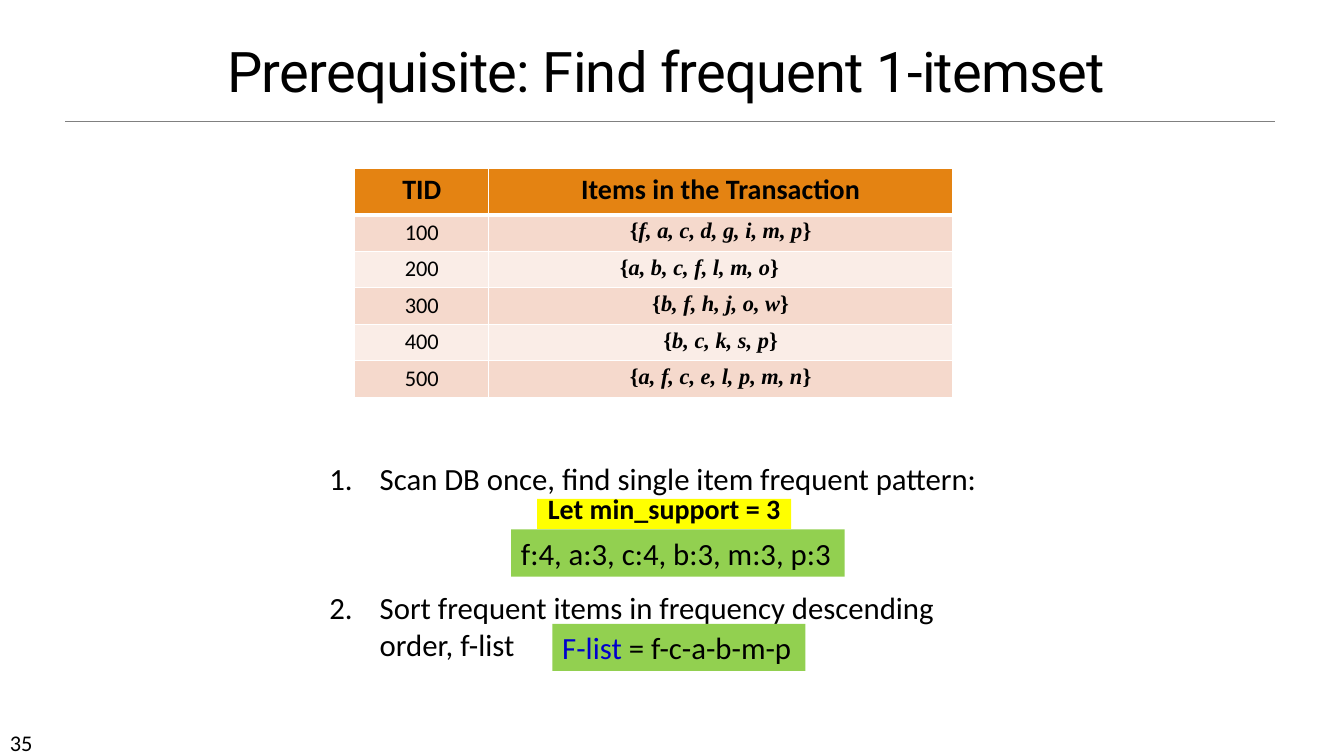
import pptx
import pptx.dml.color
import pptx.enum.shapes
import pptx.enum.text
import pptx.oxml
import pptx.oxml.ns
import pptx.util
from pptx.util import Cm

ALIGN = pptx.enum.text.PP_ALIGN
ANCHOR = pptx.enum.text.MSO_ANCHOR
BODY = {"name": "Calibri", "size": 22, "color": "000000"}
HEADER = {**BODY, "size": 20, "bold": True}
TID = {**BODY, "size": 16, "bold": False}
BRACE = {**TID, "name": "Times New Roman", "bold": True}
ITEMS = {**BRACE, "italic": True}
GREEN, YELLOW = "92D050", "FFFF00"
HEADER_FILL, ROW_FILLS = "E48312", ("F5D9CC", "FAEDE7")

TRANSACTIONS = [
    ("100", "f, a, c, d, g, i, m, p", "}"),
    ("200", "a, b, c, f, l, m, o", "}\t"),
    ("300", "b, f, h, j, o, w", "}"),
    ("400", "b, c, k, s, p", "}"),
    ("500", "a, f, c, e, l, p, m, n", "}"),
]
STEPS = [
    ("Scan DB once, find single item frequent pattern:", 4),
    ("Sort frequent items in frequency descending order, f-list", 65.5),
]


def rgb(value):
    return pptx.dml.color.RGBColor.from_string(value)


def add_xml(parent, xml):
    """Append the element, written with the a: prefix, and return it."""
    head, rest = xml.split(" ", 1) if " " in xml else (xml[:-2], "/>")
    element = pptx.oxml.parse_xml(f'{head} {pptx.oxml.ns.nsdecls("a")} {rest}')
    parent.append(element)
    return element


def write(paragraph, runs, **layout):
    """Fill the paragraph with (text, format) runs and set its layout values."""
    for attribute, value in layout.items():
        setattr(paragraph, attribute, value)
    for text, style in runs:
        run = paragraph.add_run()
        run.text = text
        for attribute, value in style.items():
            if attribute == "color":
                run.font.color.rgb = rgb(value)
            else:
                setattr(run.font, attribute, pptx.util.Pt(value) if attribute == "size" else value)


def add_text(slide, place, runs, anchor=ANCHOR.TOP, **layout):
    box = slide.shapes.add_textbox(*map(Cm, place))
    box.text_frame.word_wrap = True
    box.text_frame.vertical_anchor = anchor
    write(box.text_frame.paragraphs[0], runs, **layout)
    return box.text_frame


def add_title(slide, title):
    style = {**BODY, "name": "Roboto", "size": 40}
    frame = add_text(slide, (0.56, 0.84, 32.46, 1.9), [(title, style)],
                     ANCHOR.BOTTOM, alignment=ALIGN.CENTER, line_spacing=0.85)
    frame.paragraphs[0].runs[0].font._element.set("spc", "-50")


def add_rule(slide):
    rule = slide.shapes.add_connector(pptx.enum.shapes.MSO_CONNECTOR.STRAIGHT,
                                      Cm(1.65), Cm(3.05), Cm(32.13), Cm(3.05))
    rule.line.color.rgb = rgb("808080")
    rule.line.width = pptx.util.Pt(0.5)
    add_xml(rule._element.spPr, "<a:effectLst/>")


def add_steps(slide):
    frame = add_text(slide, (8.05, 11.46, 16.87, 5.38), [])
    for number, (step, gap) in enumerate(STEPS):
        paragraph = frame.add_paragraph() if number else frame.paragraphs[0]
        write(paragraph, [(step, BODY)], space_before=pptx.util.Pt(gap))
        properties = paragraph._p.get_or_add_pPr()
        properties.set("marL", str(Cm(1.27)))
        properties.set("indent", str(-Cm(1.27)))
        add_xml(properties, '<a:buFont typeface="+mj-lt"/>')
        add_xml(properties, '<a:buAutoNum type="arabicPeriod"/>')


def add_highlight(slide, place, fill, runs, wrap=False, **layout):
    box = slide.shapes.add_shape(pptx.enum.shapes.MSO_SHAPE.RECTANGLE, *map(Cm, place))
    box.shadow.inherit = False
    box.fill.solid()
    box.fill.fore_color.rgb = rgb(fill)
    box.line.fill.background()
    box.text_frame.word_wrap = wrap
    box.text_frame.vertical_anchor = ANCHOR.TOP
    write(box.text_frame.paragraphs[0], runs, **layout)


def fill_cell(cell, fill, runs, bottom_width=1):
    margins = {"margin_left": 0.33, "margin_right": 0.33, "margin_top": 0.1, "margin_bottom": 0.1}
    for attribute, value in margins.items():
        setattr(cell, attribute, Cm(value))
    write(cell.text_frame.paragraphs[0], runs, alignment=ALIGN.CENTER)
    properties = cell._tc.get_or_add_tcPr()
    for side, width in {"L": 1, "R": 1, "T": 1, "B": bottom_width}.items():
        add_xml(properties, f'<a:ln{side} w="{pptx.util.Pt(width)}"><a:solidFill>'
                            f'<a:srgbClr val="FFFFFF"/></a:solidFill></a:ln{side}>')
    cell.fill.solid()
    cell.fill.fore_color.rgb = rgb(fill)


def add_transactions(slide):
    table = slide.shapes.add_table(len(TRANSACTIONS) + 1, 2, Cm(8.94), Cm(4.25),
                                   Cm(15.06), Cm(5.74)).table
    for column, width in zip(table.columns, (3.38, 11.68)):
        column.width = Cm(width)
    for index, row in enumerate(table.rows):
        row.height = Cm(0.92 if index else 1.16)
    for column, heading in enumerate(("TID", "Items in the Transaction")):
        fill_cell(table.cell(0, column), HEADER_FILL, [(heading, HEADER)], bottom_width=3)
    for row, (tid, items, closing) in enumerate(TRANSACTIONS, 1):
        fill = ROW_FILLS[(row - 1) % 2]
        top_cells = ([(tid, TID)], [("{", BRACE), (items, ITEMS), (closing, BRACE)])
        for column, runs in enumerate(top_cells):
            fill_cell(table.cell(row, column), fill, runs, bottom_width=1)
            if row == 1:
                header_edge = table.cell(1, column)._tc.tcPr.find(pptx.oxml.ns.qn("a:lnT"))
                header_edge.set("w", str(pptx.util.Pt(3)))


def main():
    deck = pptx.Presentation()
    deck.slide_width, deck.slide_height = Cm(33.87), Cm(19.05)
    slide = deck.slides.add_slide(deck.slide_layouts[6])
    add_rule(slide)
    add_text(slide, (0, 18.24, 2.97, 0.76), [("35", TID)])
    add_title(slide, "Prerequisite: Find frequent 1-itemset")
    add_steps(slide)
    add_highlight(slide, (13.92, 15.72, 6.38, 1.19), GREEN,
                  [("F-list ", {**BODY, "color": "0000CC"}), ("= f-c-a-b-m-p", BODY)],
                  alignment=ALIGN.LEFT)
    add_transactions(slide)
    add_highlight(slide, (12.88, 13.34, 8.41, 1.19), GREEN,
                  [("f:4, a:3, c:4, b:3, m:3, p:3", BODY)], alignment=ALIGN.LEFT)
    add_highlight(slide, (13.54, 12.57, 6.4, 0.76), YELLOW, [("Let min_support = 3", HEADER)],
                  wrap=True, alignment=ALIGN.CENTER, line_spacing=0.6)
    deck.save("out.pptx")


if __name__ == "__main__":
    main()
